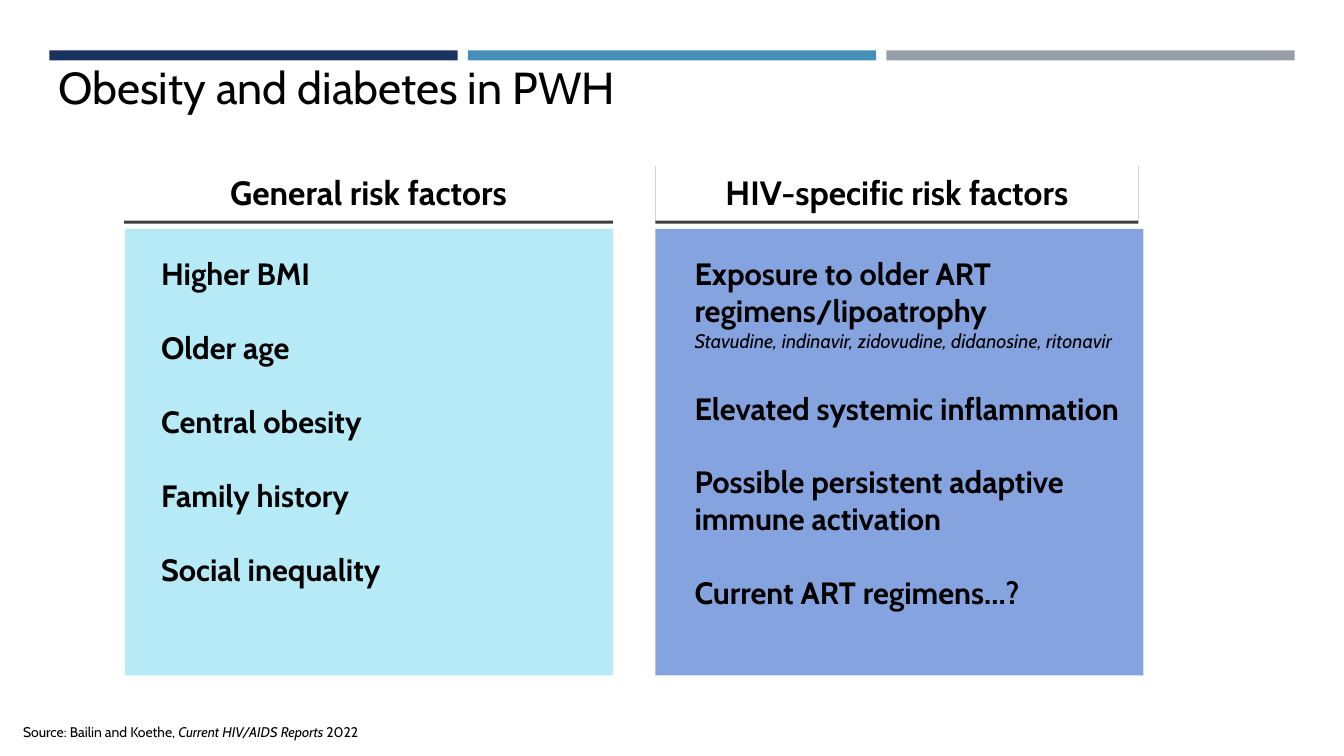
import pptx
import pptx.dml.color
import pptx.enum.shapes
import pptx.enum.text
import pptx.oxml
import pptx.util
from dataclasses import dataclass

TITLE = "Obesity and diabetes in PWH"
SOURCE = [("Source: Bailin and Koethe, ", False), ("Current HIV/AIDS Reports ", True), ("2022", False)]
PANELS = [
    {
        "heading": "General risk factors",
        "color": "B5EAF6",
        "heading_box": (1.23, 4.85),
        "panel_box": (1.24, 4.84),
        "list_box": (1.5, 4.19, 3.43),
        "factors": [
            ("Higher BMI", None),
            ("Older age", None),
            ("Central obesity", None),
            ("Family history", None),
            ("Social inequality", None),
        ],
    },
    {
        "heading": "HIV-specific risk factors",
        "color": "85A3DE",
        "heading_box": (6.5, 4.79),
        "panel_box": (6.5, 4.84),
        "list_box": (6.79, 4.43, 4.78),
        "factors": [
            ("Exposure to older ART regimens/lipoatrophy", "Stavudine, indinavir, zidovudine, didanosine, ritonavir"),
            ("Elevated systemic inflammation", None),
            ("Possible persistent adaptive immune activation", None),
            ("Current ART regimens…?", None),
        ],
    },
]


@dataclass(frozen=True)
class Theme:
    font: str = "Cabin"
    ink: str = "000000"
    paper: str = "FFFFFF"
    shadow: str = "3D3D3D"
    bars: tuple = ("1A3260", "4590B8", "969FA7")
    title: int = 32
    heading: int = 24
    factor: int = 22
    detail: int = 14
    source: int = 10
    factor_gap: float = 26.4


THEME = Theme()
BAR_LEFT, BAR_TOP, BAR_WIDTH, BAR_HEIGHT, BAR_GAP = 0.49, 0.5, 4.05, 0.1, 0.1
HEADING_TOP, HEADING_HEIGHT = 1.62, 0.57
PANEL_TOP, PANEL_HEIGHT, LIST_TOP = 2.27, 4.43, 2.48

deck = pptx.Presentation()
deck.slide_width = pptx.util.Inches(13.33)
deck.slide_height = pptx.util.Inches(7.5)
page = deck.slides.add_slide(deck.slide_layouts[6])


def add_block(left, top, width, height, color):
    block = page.shapes.add_shape(
        pptx.enum.shapes.MSO_SHAPE.RECTANGLE, *map(pptx.util.Inches, (left, top, width, height))
    )
    block.shadow.inherit = False
    block.fill.solid()
    block.fill.fore_color.rgb = pptx.dml.color.RGBColor.from_string(color)
    block.line.fill.background()
    return block


def add_text_frame(left, top, width, height):
    box = page.shapes.add_textbox(*map(pptx.util.Inches, (left, top, width, height)))
    box.text_frame.word_wrap = True
    return box.text_frame


def add_span(para, text, size, bold=False, italic=False):
    span = para.add_run()
    span.text = text
    span.font.name = THEME.font
    span.font.size = pptx.util.Pt(size)
    span.font.bold = bold
    span.font.italic = italic
    span.font.color.rgb = pptx.dml.color.RGBColor.from_string(THEME.ink)


def add_drop_shadow(block):
    effects = block.element.spPr.find(pptx.oxml.ns.qn("a:effectLst"))
    effects.append(pptx.oxml.parse_xml(
        f'<a:outerShdw {pptx.oxml.ns.nsdecls("a")} blurRad="0" dist="{pptx.util.Pt(2)}" '
        f'dir="5400000" rotWithShape="0"><a:srgbClr val="{THEME.shadow}"/></a:outerShdw>'
    ))


def add_heading(text, left, width):
    block = add_block(left, HEADING_TOP, width, HEADING_HEIGHT, THEME.paper)
    add_drop_shadow(block)
    frame = block.text_frame
    frame.word_wrap = True
    frame.vertical_anchor = pptx.enum.text.MSO_ANCHOR.BOTTOM
    frame.margin_top = frame.margin_bottom = pptx.util.Inches(0.08)
    para = frame.paragraphs[0]
    para.alignment = pptx.enum.text.PP_ALIGN.CENTER
    add_span(para, text, THEME.heading, bold=True)


def add_factors(factors, left, width, height):
    frame = add_text_frame(left, LIST_TOP, width, height)
    for index, (factor, detail) in enumerate(factors):
        para = frame.add_paragraph() if index else frame.paragraphs[0]
        if index:
            para.space_before = pptx.util.Pt(THEME.factor_gap)
        add_span(para, factor, THEME.factor, bold=True)
        if detail:
            add_span(frame.add_paragraph(), detail, THEME.detail, italic=True)


for column, color in enumerate(THEME.bars):
    add_block(BAR_LEFT + column * (BAR_WIDTH + BAR_GAP), BAR_TOP, BAR_WIDTH, BAR_HEIGHT, color)

title = add_text_frame(0.48, 0.6, 12.48, 1.06).paragraphs[0]
title.line_spacing = 0.9
add_span(title, TITLE, THEME.title)

for panel in PANELS:
    add_heading(panel["heading"], *panel["heading_box"])
    panel_left, panel_width = panel["panel_box"]
    add_block(panel_left, PANEL_TOP, panel_width, PANEL_HEIGHT, panel["color"])
    add_factors(panel["factors"], *panel["list_box"])

source = add_text_frame(0.13, 7.13, 4.29, 0.27).paragraphs[0]
for text, italic in SOURCE:
    add_span(source, text, THEME.source, italic=italic)

deck.save("out.pptx")
